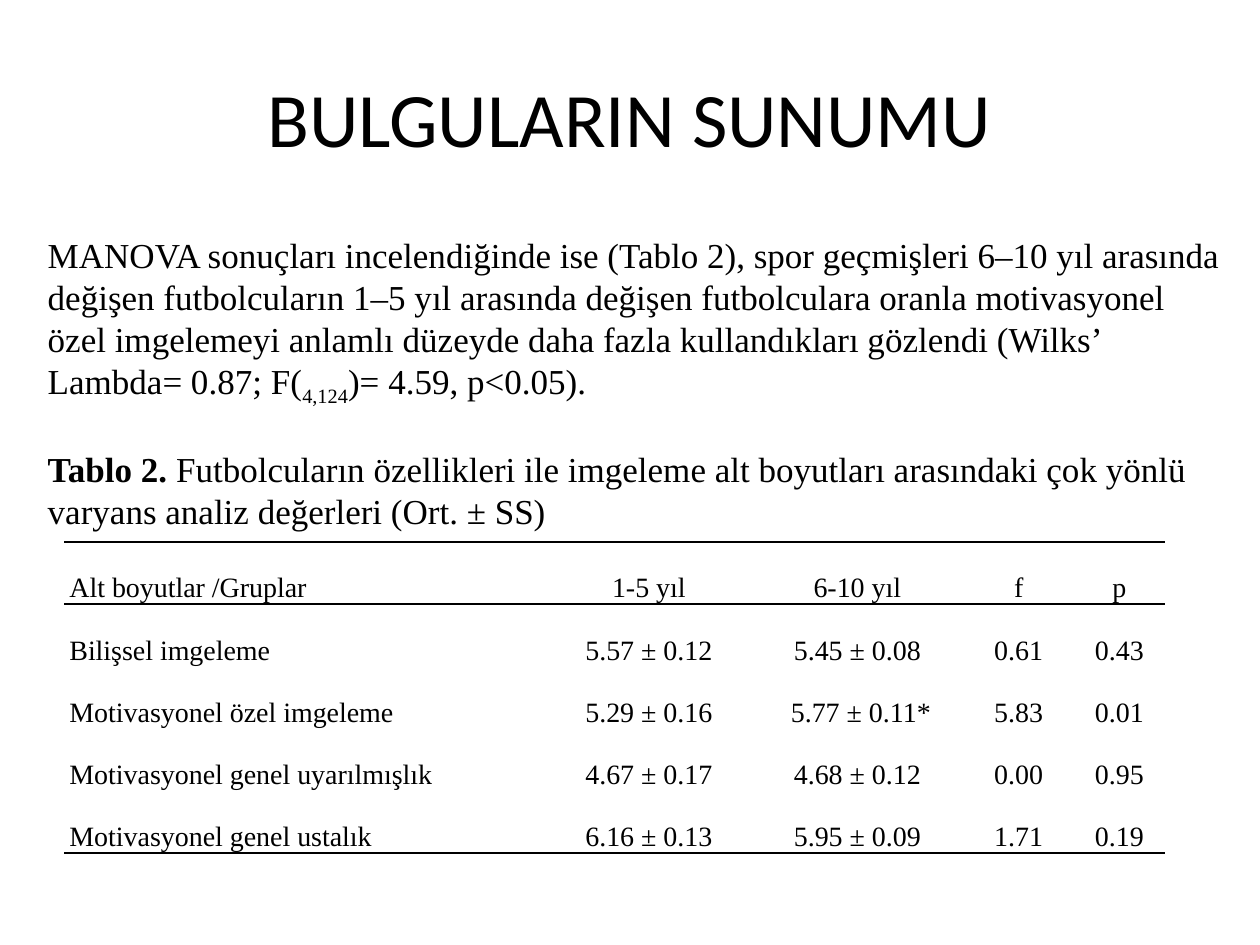
from pptx import Presentation
from pptx.dml.color import RGBColor
from pptx.enum.text import MSO_ANCHOR, PP_ALIGN
from pptx.oxml.ns import qn
from pptx.util import Pt
from lxml import etree

LEFT, MID = PP_ALIGN.LEFT, PP_ALIGN.CENTER
TOP, CENTER = MSO_ANCHOR.TOP, MSO_ANCHOR.MIDDLE
HEX = {"ink": "000000"}
INK = RGBColor.from_string(HEX["ink"])
SERIF = "Times New Roman"

# Content
TITLE = "BULGULARIN SUNUMU"
PARAS = [  # runs of (text, style)
    [("MANOVA sonuçları incelendiğinde ise (Tablo 2), spor geçmişleri 6–10 yıl "
      "arasında değişen futbolcuların 1–5 yıl arasında değişen futbolculara oranla "
      "motivasyonel özel imgelemeyi anlamlı düzeyde daha fazla kullandıkları gözlendi "
      "(Wilks’ Lambda= 0.87; F(", ""),
     ("4,124", "sub"),
     (")= 4.59, p<0.05).", "")],
    [("Tablo 2. ", "bold"),
     ("Futbolcuların özellikleri ile imgeleme alt boyutları arasındaki çok yönlü "
      "varyans analiz değerleri (Ort. ± SS)", "")],
]
ROWS = [
    ("Alt boyutlar /Gruplar", "1-5 yıl", "6-10 yıl", "f", "p"),
    ("Bilişsel imgeleme", "5.57 ± 0.12", "5.45 ± 0.08", "0.61", "0.43"),
    ("Motivasyonel özel imgeleme", "5.29 ± 0.16", " 5.77 ± 0.11*", "5.83", "0.01"),
    ("Motivasyonel genel uyarılmışlık", "4.67 ± 0.17", "4.68 ± 0.12", "0.00", "0.95"),
    ("Motivasyonel genel ustalık", "6.16 ± 0.13", "5.95 ± 0.09", "1.71", "0.19"),
]
COLS = [275.8, 116.6, 121.7, 62.6, 52.6]
ROW_H = 35.5
SIDES = ("lnL", "lnR", "lnT", "lnB")
RULES = {0: ("lnT", "lnB"), 1: ("lnT",), len(ROWS) - 1: ("lnB",)}


def set_font(para, name, size):
    para.font.name, para.font.size = name, Pt(size)
    para.font.color.rgb = INK


def set_edges(cell, ruled):
    """Rule the named sides and clear the others."""
    props = cell._tc.get_or_add_tcPr()
    for spot, side in enumerate(SIDES):
        line = etree.Element(qn("a:" + side), w=str(Pt(1)))
        if side in ruled:
            fill = etree.SubElement(line, qn("a:solidFill"))
            etree.SubElement(fill, qn("a:srgbClr"), val=HEX["ink"])
        else:
            etree.SubElement(line, qn("a:noFill"))
        props.insert(spot, line)


deck = Presentation()
deck.slide_width, deck.slide_height = Pt(720), Pt(540)
slide = deck.slides.add_slide(deck.slide_layouts[5])

# Title
title = slide.shapes.title
title.left, title.top, title.width, title.height = Pt(36), Pt(21.6), Pt(648), Pt(90)
title.text_frame.text = TITLE
title.text_frame.vertical_anchor = CENTER
head = title.text_frame.paragraphs[0]
head.alignment = MID
set_font(head, "Calibri", 44)

# Table
table = slide.shapes.add_table(len(ROWS), len(COLS), Pt(36.7), Pt(309.6),
                               Pt(sum(COLS)), Pt(ROW_H * len(ROWS))).table
table.first_row = table.horz_banding = False
for col, width in zip(table.columns, COLS):
    col.width = Pt(width)
for r, row in enumerate(ROWS):
    table.rows[r].height = Pt(ROW_H)
    for c, text in enumerate(row):
        cell = table.cell(r, c)
        cell.margin_left = cell.margin_right = Pt(3)
        cell.margin_top = cell.margin_bottom = 0
        cell.fill.background()
        cell.text = text
        para = cell.text_frame.paragraphs[0]
        para.alignment = MID if c else LEFT
        para.line_spacing, para.space_before = 2.0, Pt(2)
        set_font(para, SERIF, 16)
        set_edges(cell, RULES.get(r, ()))

# Findings and table caption
box = slide.shapes.add_textbox(Pt(20.2), Pt(131), Pt(686.2), Pt(178))
frame = box.text_frame
frame.word_wrap = True
frame.vertical_anchor = TOP
frame.margin_top, frame.margin_bottom = Pt(2.5), 0
for i, runs in enumerate(PARAS):
    para = frame.add_paragraph() if i else frame.paragraphs[0]
    para.space_before = Pt(23 * i)
    set_font(para, SERIF, 20)
    for text, style in runs:
        run = para.add_run()
        run.text = text
        if style == "bold":
            run.font.bold = True
        elif style == "sub":
            run.font._element.set("baseline", "-25000")

deck.save("out.pptx")
